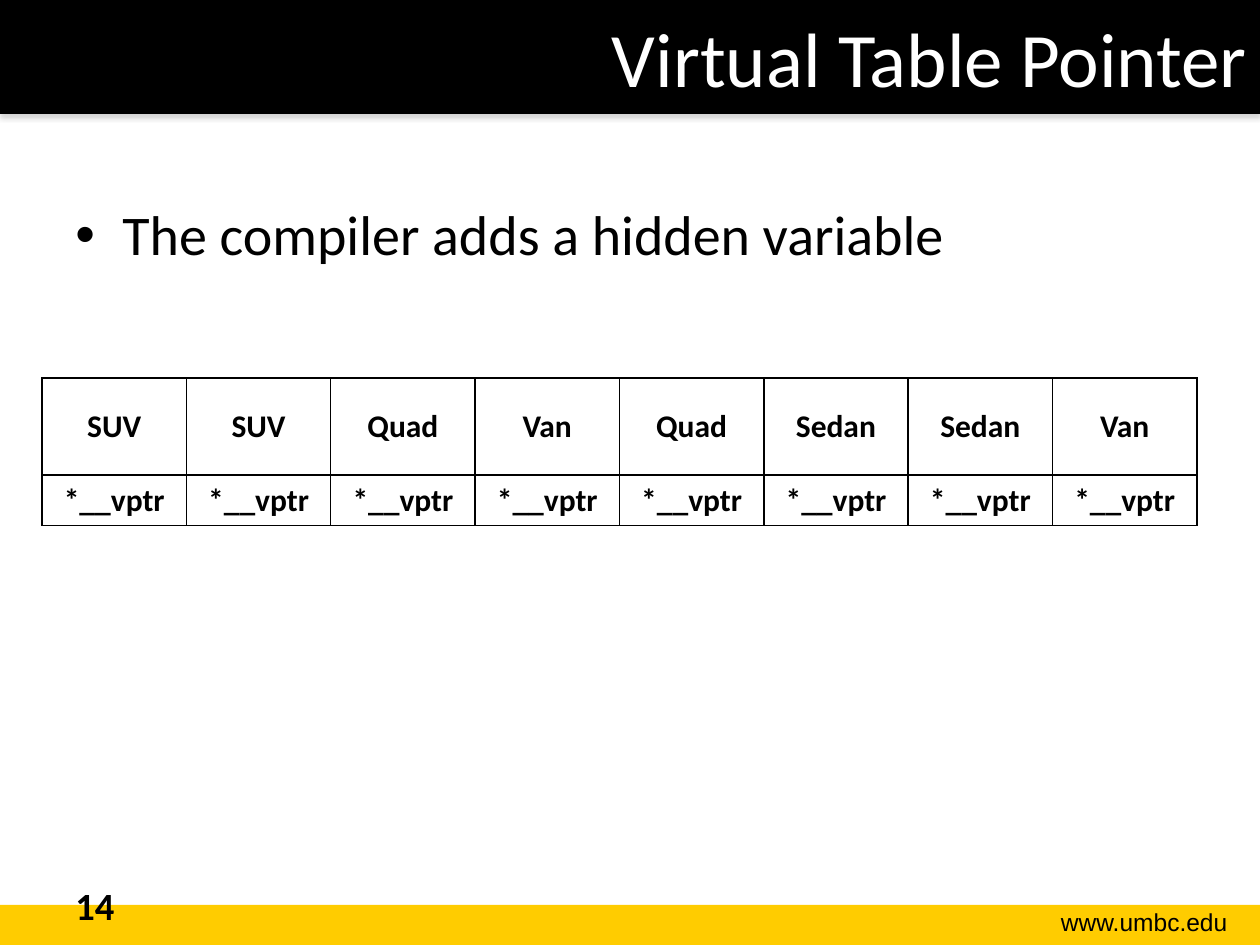
from lxml.etree import SubElement
from pptx import Presentation
from pptx.dml.color import RGBColor
from pptx.enum.shapes import MSO_SHAPE
from pptx.enum.text import MSO_ANCHOR, PP_ALIGN
from pptx.oxml import parse_xml
from pptx.oxml.ns import nsdecls, qn
from pptx.util import Pt

BLACK = RGBColor(0x00, 0x00, 0x00)
WHITE = RGBColor(0xFF, 0xFF, 0xFF)
GOLD = RGBColor(0xFF, 0xCC, 0x00)


def px(n):
    return round(n * 914400 / 126)


def write(frame, text, size, color=BLACK, font="Calibri", bold=False, align=PP_ALIGN.LEFT):
    frame.text = text
    paragraph = frame.paragraphs[0]
    paragraph.alignment = align
    style = paragraph.runs[0].font
    style.size, style.name, style.bold = Pt(size), font, bold
    style.color.rgb = color
    return paragraph


prs = Presentation()
prs.slide_width, prs.slide_height = px(1260), px(945)
slide = prs.slides.add_slide(prs.slide_layouts[6])
shapes = slide.shapes

# Footer and header bands
for top, height, color in [(905, 40, GOLD), (0, 114, BLACK)]:
    band = shapes.add_shape(MSO_SHAPE.RECTANGLE, 0, px(top), px(1260), px(height))
    band.shadow.inherit = False
    band.fill.solid()
    band.fill.fore_color.rgb = color
    band.line.fill.background()

# Soft shadow below the header, the last band drawn
effects = band._element.spPr.find(qn("a:effectLst"))
effects.append(parse_xml(
    f'<a:outerShdw {nsdecls("a")} blurRad="{Pt(3.1)}" dist="{Pt(1.8)}" dir="5400000" rotWithShape="0">'
    '<a:srgbClr val="808080"><a:alpha val="35000"/></a:srgbClr></a:outerShdw>'))

# Web address
address = shapes.add_textbox(px(989), px(901), px(251), px(43)).text_frame
write(address, "www.umbc.edu", 14, font="Arial", align=PP_ALIGN.RIGHT)

# Title
title = shapes.add_textbox(px(126), 0, px(1134), px(158)).text_frame
title.word_wrap = True
title.margin_top = px(10)
write(title, "Virtual Table Pointer", 44, WHITE, align=PP_ALIGN.RIGHT)

# Bullet
body = shapes.add_textbox(px(63), px(190), px(1134), px(654)).text_frame
body.word_wrap = True
body.margin_top = px(10)
point = write(body, "The compiler adds a hidden variable", 32)
p_pr = point._p.get_or_add_pPr()
p_pr.set("marL", str(px(47)))
p_pr.set("indent", str(-px(47)))
SubElement(p_pr, qn("a:buFont"), typeface="Arial")
SubElement(p_pr, qn("a:buChar"), char="•")

# Vehicles, each with its hidden pointer
vehicles = ["SUV", "SUV", "Quad", "Van", "Quad", "Sedan", "Sedan", "Van"]
rows = [vehicles, ["*__vptr"] * len(vehicles)]
table = shapes.add_table(len(rows), len(vehicles), px(42), px(378), px(1155), px(147)).table
table.first_row = table.horz_banding = False
for row, height in zip(table.rows, (97, 50)):
    row.height = px(height)
for column in table.columns:
    column.width = px(1155) // len(vehicles)
for r, labels in enumerate(rows):
    for c, label in enumerate(labels):
        cell = table.cell(r, c)
        cell.vertical_anchor = MSO_ANCHOR.MIDDLE
        write(cell.text_frame, label, 18, bold=True, align=PP_ALIGN.CENTER)
        tc_pr = cell._tc.get_or_add_tcPr()
        for side in ("lnL", "lnR", "lnT", "lnB"):
            border = SubElement(tc_pr, qn(f"a:{side}"), w=str(Pt(1)))
            SubElement(SubElement(border, qn("a:solidFill")), qn("a:srgbClr"), val=str(BLACK))
        cell.fill.background()

# Slide number
number = shapes.add_textbox(px(63), px(876), px(294), px(50)).text_frame
number.word_wrap = True
write(number, "14", 22, bold=True)

prs.save("out.pptx")
